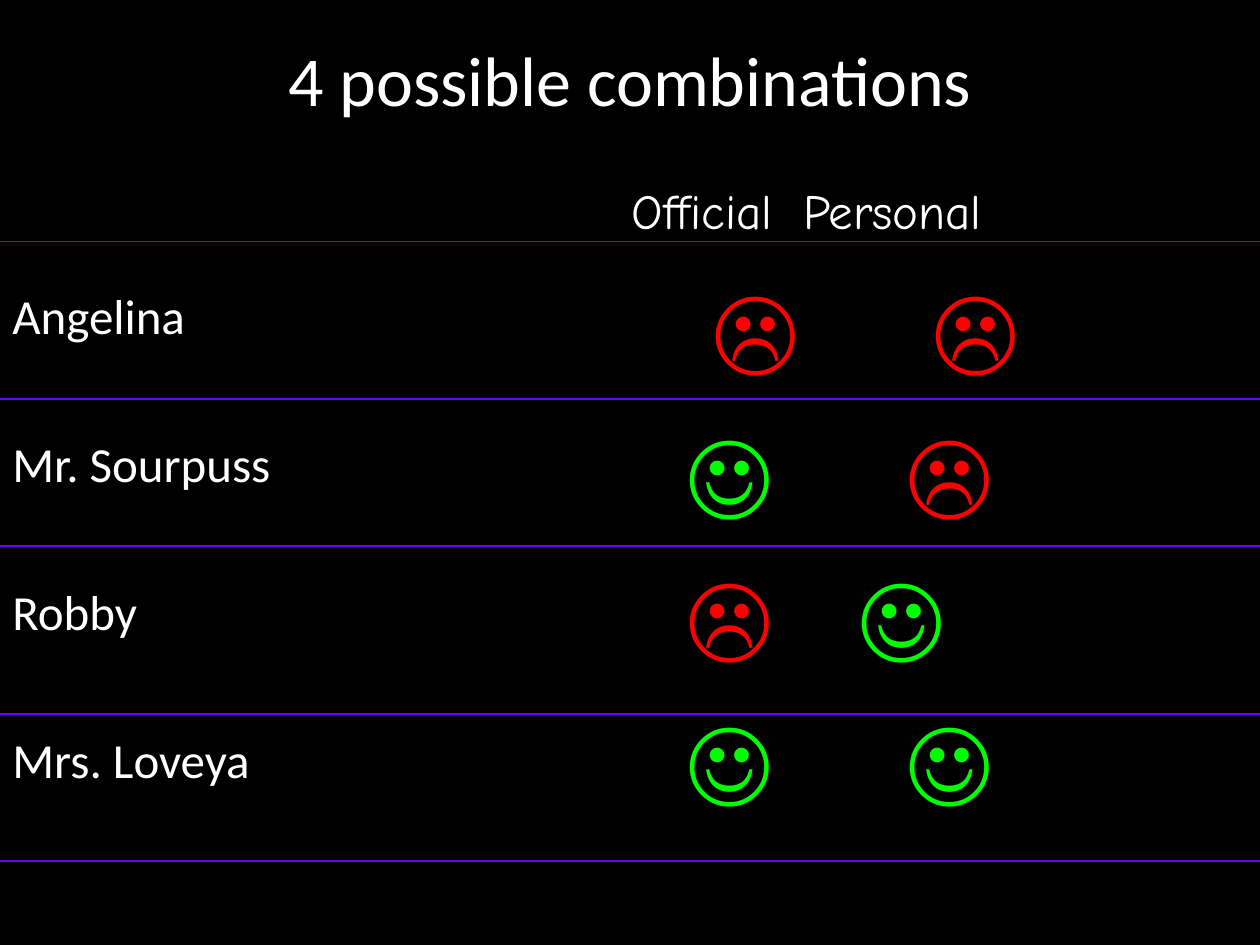
from lxml.etree import SubElement
from pptx import Presentation
from pptx.dml.color import RGBColor
from pptx.enum.shapes import MSO_CONNECTOR
from pptx.enum.text import MSO_ANCHOR, PP_ALIGN
from pptx.oxml.ns import qn
from pptx.util import Inches, Pt

BLACK = RGBColor(0, 0, 0)
WHITE = RGBColor(255, 255, 255)
RED = RGBColor(255, 0, 0)
GREEN = RGBColor(0, 255, 0)
PURPLE = RGBColor(0x66, 0, 255)
SAD, GLAD = "☹", "☺"

# One unit of the grid is a twelfth of an inch: 120 columns by 90 rows.
UNIT = Inches(1) // 12
WIDE, HIGH = 120 * UNIT, 90 * UNIT
RULES = [23, 38, 52, 68, 82]

# Name, moods (official, personal), and the tab stop of each in inches.
PEOPLE = [
    ("Angelina", (SAD, SAD), (0.64, 2.39)),
    ("Mr. Sourpuss", (GLAD, SAD), (0.43, 2.18)),
    ("Robby", (SAD, GLAD), (0.43, 1.8)),
    ("Mrs. Loveya", (GLAD, GLAD), (0.43, 2.18)),
]


def style(run, size, color, font="Calibri", bold=False):
    run.font.size = Pt(size)
    run.font.name = font
    run.font.color.rgb = color
    run.font.bold = bold


def set_tabs(para, stops):
    tabs = SubElement(para._p.get_or_add_pPr(), qn("a:tabLst"))
    for stop in stops:
        SubElement(tabs, qn("a:tab"), pos=str(Inches(stop)), algn="l")


deck = Presentation()
deck.slide_width, deck.slide_height = WIDE, HIGH
slide = deck.slides.add_slide(deck.slide_layouts[5])
slide.background.fill.solid()
slide.background.fill.fore_color.rgb = BLACK

title = slide.shapes.title
title.left, title.top, title.width, title.height = 0, 0, WIDE, 15 * UNIT
title.text_frame.text = "4 possible combinations"
title.text_frame.vertical_anchor = MSO_ANCHOR.MIDDLE
title.text_frame.paragraphs[0].alignment = PP_ALIGN.CENTER
style(title.text_frame.paragraphs[0].runs[0], 40, WHITE)

# Names on the left
names = slide.shapes.add_textbox(0, 19 * UNIT, 61 * UNIT, 71 * UNIT).text_frame
names.word_wrap = True
names.margin_top = Inches(0.64)
names.text = "\n".join(name for name, moods, stops in PEOPLE)
for row, para in enumerate(names.paragraphs):
    para.line_spacing = 1.1
    para.space_before = Pt(47.6 if row else 0)
    style(para.runs[0], 28, WHITE)

for rule in RULES:
    line = slide.shapes.add_connector(
        MSO_CONNECTOR.STRAIGHT, 0, rule * UNIT, WIDE, rule * UNIT)
    line.line.color.rgb = PURPLE
    line.line.width = Pt(0.75)
    SubElement(line._element.spPr, qn("a:effectLst"))

# Headings and moods on the right
moods_box = slide.shapes.add_textbox(59 * UNIT, 16 * UNIT, 61 * UNIT, 74 * UNIT)
frame = moods_box.text_frame
frame.word_wrap = True
frame.text = "Official\tPersonal"
head = frame.paragraphs[0]
head.line_spacing = 1.1
set_tabs(head, [1.36])
style(head.runs[0], 28, WHITE, "Comic Neue")

for name, moods, stops in PEOPLE:
    para = frame.add_paragraph()
    para.line_spacing = 1.1
    para.space_before = Pt(10.8)
    set_tabs(para, stops)
    for mood in moods:
        run = para.add_run()
        run.text = "\t" + mood
        style(run, 54, GREEN if mood == GLAD else RED, "Comic Neue", True)

deck.save("out.pptx")
